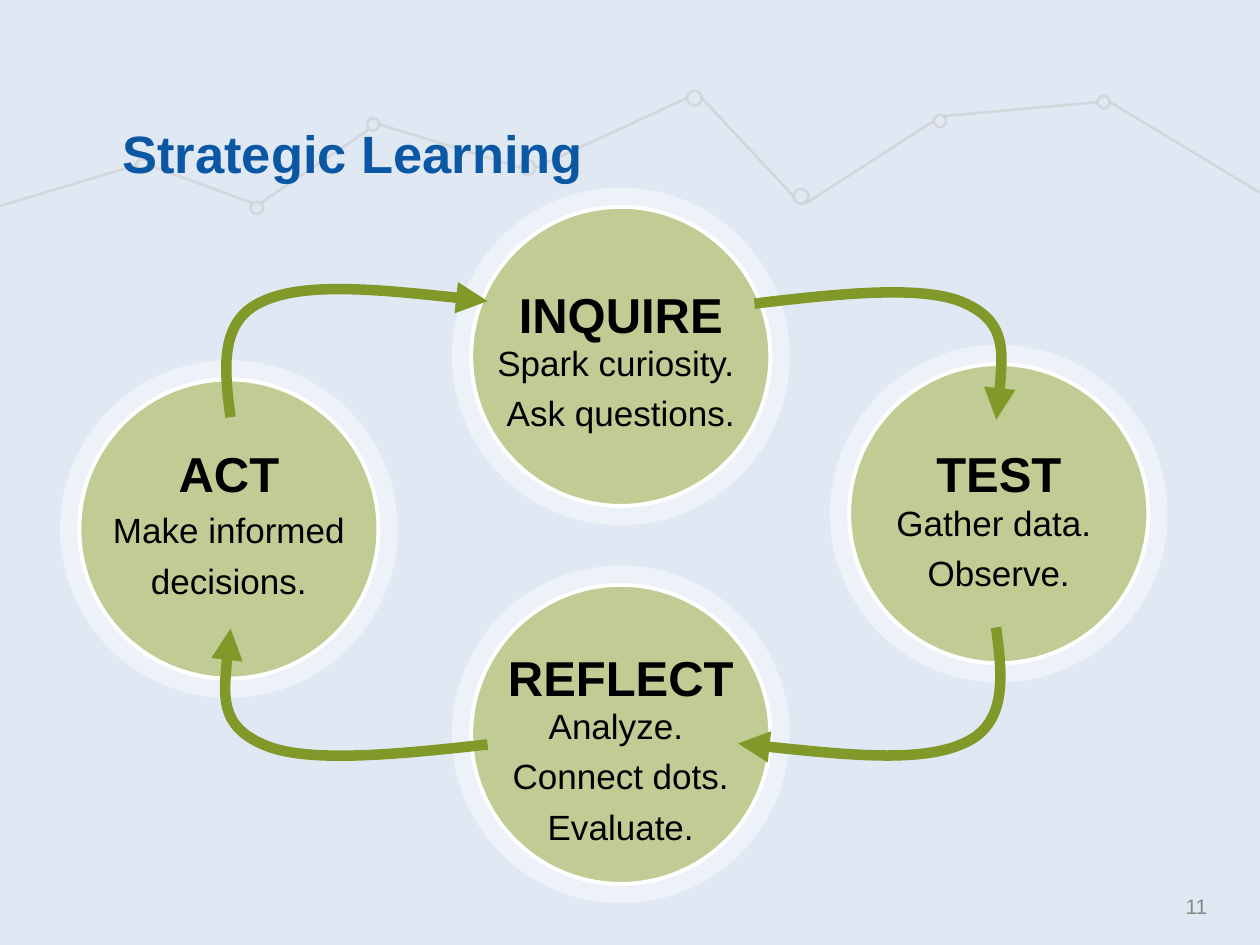
from dataclasses import dataclass

from pptx import Presentation
from pptx.dml.color import RGBColor
from pptx.enum.shapes import MSO_CONNECTOR as Connector, MSO_SHAPE as Preset
from pptx.enum.text import MSO_ANCHOR as Anchor, PP_ALIGN as Align
from pptx.oxml.ns import qn
from pptx.oxml.xmlchemy import OxmlElement
from pptx.util import Cm, Pt


@dataclass(frozen=True)
class Theme:
    font: str = "Arial"
    background: str = "E0E8F3"
    trend: str = "C7C7C7"
    white: str = "FFFFFF"
    disc: str = "C0CC93"
    arrow: str = "809928"
    title: str = "0A57A4"
    text: str = "000000"
    number: str = "898989"
    title_size: int = 30
    heading_size: int = 28
    body_size: int = 20
    number_size: int = 12


@dataclass(frozen=True)
class Box:
    left: float
    top: float
    width: float
    height: float

    def lengths(self):
        return Cm(self.left), Cm(self.top), Cm(self.width), Cm(self.height)


THEME = Theme()
SLIDE = Box(0, 0, 25.4, 19.05)
DISC = 6.81
RING = 0.39

TREND_NODES = [
    (2.87, 3.33, 0.25), (5.18, 4.19, 0.25), (7.52, 2.51, 0.25), (10.64, 3.38, 0.3),
    (14, 1.98, 0.3), (16.15, 3.96, 0.3), (18.95, 2.44, 0.25), (22.25, 2.06, 0.25),
]
TREND_LINES = [
    (-0.89, 4.42, 2.74, 3.33), (5.08, 4.09, 3, 3.33), (7.42, 2.62, 5.26, 4.09),
    (10.49, 3.38, 7.65, 2.51), (13.84, 1.98, 10.8, 3.38), (16, 3.96, 14.15, 1.98),
    (18.82, 2.44, 16.26, 4.09), (22.12, 2.06, 19.02, 2.34), (26.29, 4.42, 22.38, 2.06),
]
STAGES = [
    (9.11, 3.78, "INQUIRE", 1.58, ["Spark curiosity. ", "Ask questions."], 2.8, 8.15, 0),
    (16.73, 6.95, "TEST", 1.63, ["Gather data. ", "Observe."], 2.86, 8.15, 0),
    (9.11, 11.4, "REFLECT", 1.28, ["Analyze. ", "Connect dots.", " Evaluate. "], 2.5, 5.79, 0),
    (1.21, 7.26, "ACT", 1.32, ["Make informed decisions."], 2.7, 5.79, 6),
]
ARROWS = [
    (Box(15.21, 5.89, 4.95, 2.57), False, False, "a:tailEnd"),
    (Box(14.88, 12.65, 5.28, 2.57), False, True, "a:headEnd"),
    (Box(4.57, 12.67, 5.26, 2.57), True, True, "a:tailEnd"),
    (Box(4.57, 5.84, 5.26, 2.57), True, False, "a:headEnd"),
]
BEND_START = (0, 0.09)
BEND_CURVES = [
    [(0.35, 0.01), (0.7, -0.06), (0.86, 0.09)],
    [(1.03, 0.24), (1.01, 0.62), (0.985, 1)],
]


def color(value):
    return RGBColor.from_string(value)


def set_alpha(shape, percent):
    for node in shape.element.iter(qn("a:srgbClr")):
        alpha = OxmlElement("a:alpha")
        alpha.set("val", str(percent * 1000))
        node.append(alpha)


def set_line(shape, value, width):
    shape.line.color.rgb = color(value)
    shape.line.width = Pt(width)


def add_ellipse(slide, box, fill=None):
    shape = slide.shapes.add_shape(Preset.OVAL, *box.lengths())
    shape.shadow.inherit = False
    if fill:
        shape.fill.solid()
        shape.fill.fore_color.rgb = color(fill)
    else:
        shape.fill.background()
    return shape


def add_text(slide, box, lines, size, value, bold=False, align=Align.CENTER,
             anchor=Anchor.TOP, spacing=1.2, before=0, inset=(0.25, 0.13)):
    frame = slide.shapes.add_textbox(*box.lengths()).text_frame
    frame.word_wrap = True
    frame.vertical_anchor = anchor
    frame.margin_left = frame.margin_right = Cm(inset[0])
    frame.margin_top = frame.margin_bottom = Cm(inset[1])
    for index, line in enumerate(lines):
        paragraph = frame.add_paragraph() if index else frame.paragraphs[0]
        paragraph.alignment = align
        paragraph.line_spacing = spacing
        paragraph.space_before = Pt(before)
        run = paragraph.add_run()
        run.text = line
        run.font.name = THEME.font
        run.font.size = Pt(size)
        run.font.bold = bold
        run.font.color.rgb = color(value)


def add_trend(slide, box):
    for x1, y1, x2, y2 in TREND_LINES:
        line = slide.shapes.add_connector(
            Connector.STRAIGHT, Cm(box.left + x1), Cm(box.top + y1),
            Cm(box.left + x2), Cm(box.top + y2))
        set_line(line, THEME.trend, 1.5)
        set_alpha(line, 50)
        line.element.spPr.append(OxmlElement("a:effectLst"))
    for x, y, size in TREND_NODES:
        node = add_ellipse(slide, Box(box.left + x - size / 2, box.top + y - size / 2, size, size))
        set_line(node, THEME.trend, 1.5)
        set_alpha(node, 50)


def add_stage(slide, box, heading, heading_top, lines, body_top, body_width, before):
    halo = add_ellipse(slide, box, THEME.white)
    halo.line.fill.background()
    set_alpha(halo, 42)
    inner = box.width - 2 * RING
    disc = add_ellipse(slide, Box(box.left + RING, box.top + RING, inner, inner), THEME.disc)
    set_line(disc, THEME.white, 2.25)

    def centred(top, width, height):
        return Box(box.left + (box.width - width) / 2, box.top + top, width, height)

    add_text(slide, centred(heading_top, 5.36, 1.55), [heading],
             THEME.heading_size, THEME.text, bold=True, before=6)
    body_height = 3.25 if len(lines) == 3 else 2.25
    add_text(slide, centred(body_top, body_width, body_height), lines,
             THEME.body_size, THEME.text, before=before)


def add_arrow(slide, box, flip_x, flip_y, arrow_end):
    left, top, width, height = box.lengths()
    builder = slide.shapes.build_freeform(left, top)
    builder.add_line_segments([(left + width, top + height)], close=False)
    arrow = builder.convert_to_shape()
    outline = next(arrow.element.iter(qn("a:path")))
    for segment in list(outline):
        outline.remove(segment)
    for tag, points in [("a:moveTo", [BEND_START])] + [("a:cubicBezTo", c) for c in BEND_CURVES]:
        segment = OxmlElement(tag)
        for x, y in points:
            point = OxmlElement("a:pt")
            point.set("x", str(round(width * (1 - x if flip_x else x))))
            point.set("y", str(round(height * (1 - y if flip_y else y))))
            segment.append(point)
        outline.append(segment)
    arrow.shadow.inherit = False
    arrow.fill.background()
    set_line(arrow, THEME.arrow, 6)
    end = OxmlElement(arrow_end)
    end.set("type", "triangle")
    arrow.element.spPr.find(qn("a:ln")).append(end)


def add_labels(slide, box):
    add_text(slide, Box(box.left + 2.47, box.top + 1.37, 19.25, 2.34), ["Strategic Learning"],
             THEME.title_size, THEME.title, bold=True, align=Align.LEFT,
             anchor=Anchor.BOTTOM, spacing=1, inset=(0, 0))
    add_text(slide, Box(box.left + 18.42, box.top + 17.76, 5.92, 1.02), ["11"],
             THEME.number_size, THEME.number, align=Align.RIGHT,
             anchor=Anchor.MIDDLE, spacing=1, inset=(0, 0))


def main():
    presentation = Presentation()
    presentation.slide_width = Cm(SLIDE.width)
    presentation.slide_height = Cm(SLIDE.height)
    slide = presentation.slides.add_slide(presentation.slide_layouts[6])
    slide.background.fill.solid()
    slide.background.fill.fore_color.rgb = color(THEME.background)
    add_trend(slide, SLIDE)
    for left, top, *content in STAGES:
        add_stage(slide, Box(left, top, DISC, DISC), *content)
    for arrow in ARROWS:
        add_arrow(slide, *arrow)
    add_labels(slide, SLIDE)
    presentation.save("out.pptx")


if __name__ == "__main__":
    main()
